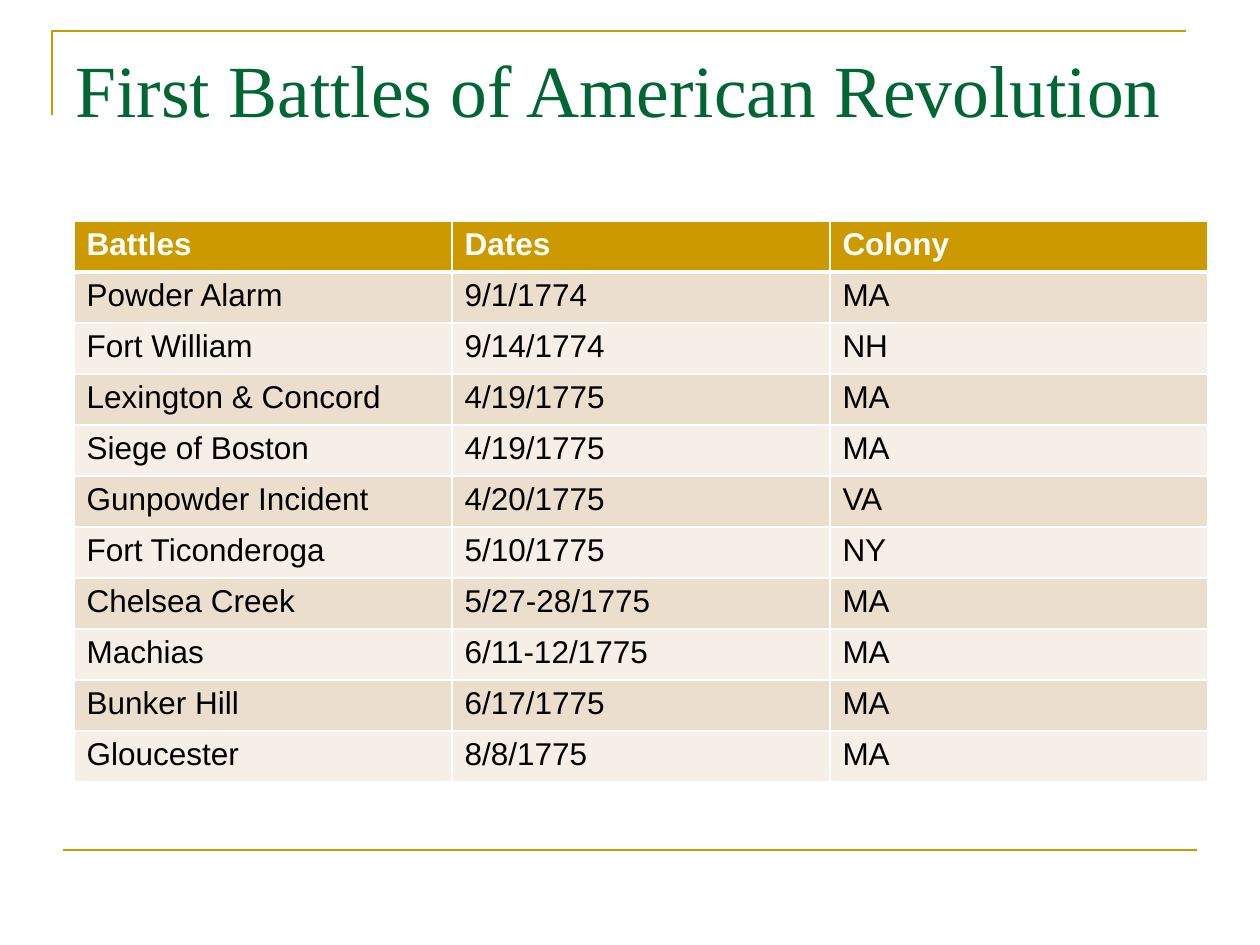
from lxml import etree
from pptx import Presentation
from pptx.dml.color import RGBColor
from pptx.enum.shapes import MSO_CONNECTOR
from pptx.enum.text import MSO_ANCHOR, MSO_AUTO_SIZE, PP_ALIGN
from pptx.oxml.ns import qn
from pptx.util import Emu, Pt

STRAIGHT = MSO_CONNECTOR.STRAIGHT
TOP = MSO_ANCHOR.TOP
LEFT = PP_ALIGN.LEFT
NO_AUTOFIT = MSO_AUTO_SIZE.NONE
TITLE_ONLY = 5
EMU_PER_PX = 914400 // 126

GOLD, GREEN, WHITE, BLACK = "CC9900", "006633", "FFFFFF", "000000"
BANDS = ("ECDECC", "F6EFE7")

HEADINGS = ("Battles", "Dates", "Colony")
BATTLES = (
    ("Powder Alarm", "9/1/1774", "MA"),
    ("Fort William", "9/14/1774", "NH"),
    ("Lexington & Concord", "4/19/1775", "MA"),
    ("Siege of Boston", "4/19/1775", "MA"),
    ("Gunpowder Incident", "4/20/1775", "VA"),
    ("Fort Ticonderoga", "5/10/1775", "NY"),
    ("Chelsea Creek", "5/27-28/1775", "MA"),
    ("Machias", "6/11-12/1775", "MA"),
    ("Bunker Hill", "6/17/1775", "MA"),
    ("Gloucester", "8/8/1775", "MA"),
)


def px(length):
    return Emu(length * EMU_PER_PX)


def color(value):
    return RGBColor.from_string(value)


class Page:
    """The current slide and its style."""

    title_font, title_size = "Times New Roman", 42
    body_font, body_size = "Arial", 18
    rule_width = 1.5

    def __init__(self, deck):
        self.slide = deck.slides.add_slide(deck.slide_layouts[TITLE_ONLY])
        self.shapes = self.slide.shapes

    def style_text(self, frame, font, size, fill, bold=False):
        for para in frame.paragraphs:
            para.alignment = LEFT
            for span in para.runs:
                span.font.name = font
                span.font.size = Pt(size)
                span.font.bold = bold
                span.font.color.rgb = color(fill)

    def style_line(self, shape):
        shape.line.color.rgb = color(GOLD)
        shape.line.width = Pt(self.rule_width)

    def title(self, text, left, top, width, height):
        box = self.shapes.title
        box.left, box.top = px(left), px(top)
        box.width, box.height = px(width), px(height)
        frame = box.text_frame
        frame.text = text
        frame.word_wrap = True
        frame.auto_size = NO_AUTOFIT
        frame.vertical_anchor = TOP
        self.style_text(frame, self.title_font, self.title_size, GREEN)

    def corner(self, left, top, right, bottom):
        builder = self.shapes.build_freeform(px(left), px(bottom))
        points = [(px(left), px(top)), (px(right), px(top))]
        builder.add_line_segments(points, close=False)
        shape = builder.convert_to_shape()
        shape.shadow.inherit = False
        shape.fill.background()
        self.style_line(shape)

    def rule(self, left, right, y):
        line = self.shapes.add_connector(STRAIGHT, px(left), px(y), px(right), px(y))
        self.style_line(line)
        etree.SubElement(line._element.spPr, qn("a:effectLst"))

    def cell_borders(self, cell, bottom):
        properties = cell._tc.get_or_add_tcPr()
        for side, width in (("L", 1), ("R", 1), ("T", 1), ("B", bottom)):
            border = etree.SubElement(properties, qn(f"a:ln{side}"), w=str(Pt(width)))
            solid = etree.SubElement(border, qn("a:solidFill"))
            etree.SubElement(solid, qn("a:srgbClr"), val=WHITE)

    def table(self, rows, left, top, column_width, row_height):
        columns = len(rows[0])
        table = self.shapes.add_table(
            len(rows), columns, px(left), px(top),
            px(column_width * columns), px(row_height * len(rows))).table
        for column in table.columns:
            column.width = px(column_width)
        for r, values in enumerate(rows):
            table.rows[r].height = px(row_height)
            header = r == 0
            fill = GOLD if header else BANDS[(r - 1) % 2]
            for c, value in enumerate(values):
                cell = table.cell(r, c)
                cell.text = value
                self.style_text(cell.text_frame, self.body_font, self.body_size,
                                WHITE if header else BLACK, header)
                # The heavy line under the header is shared with the row below
                self.cell_borders(cell, 3 if header else 1)
                cell.fill.solid()
                cell.fill.fore_color.rgb = color(fill)


def main():
    deck = Presentation()
    deck.slide_width, deck.slide_height = px(1260), px(945)
    page = Page(deck)

    # Frame lines
    page.corner(52, 31, 1186, 115)
    page.rule(63, 1197, 850)

    # Title and table of battles
    page.title("First Battles of American Revolution", 63, 38, 1134, 157)
    page.table((HEADINGS, *BATTLES), 74, 221, 378, 51)

    deck.save("out.pptx")


if __name__ == "__main__":
    main()
